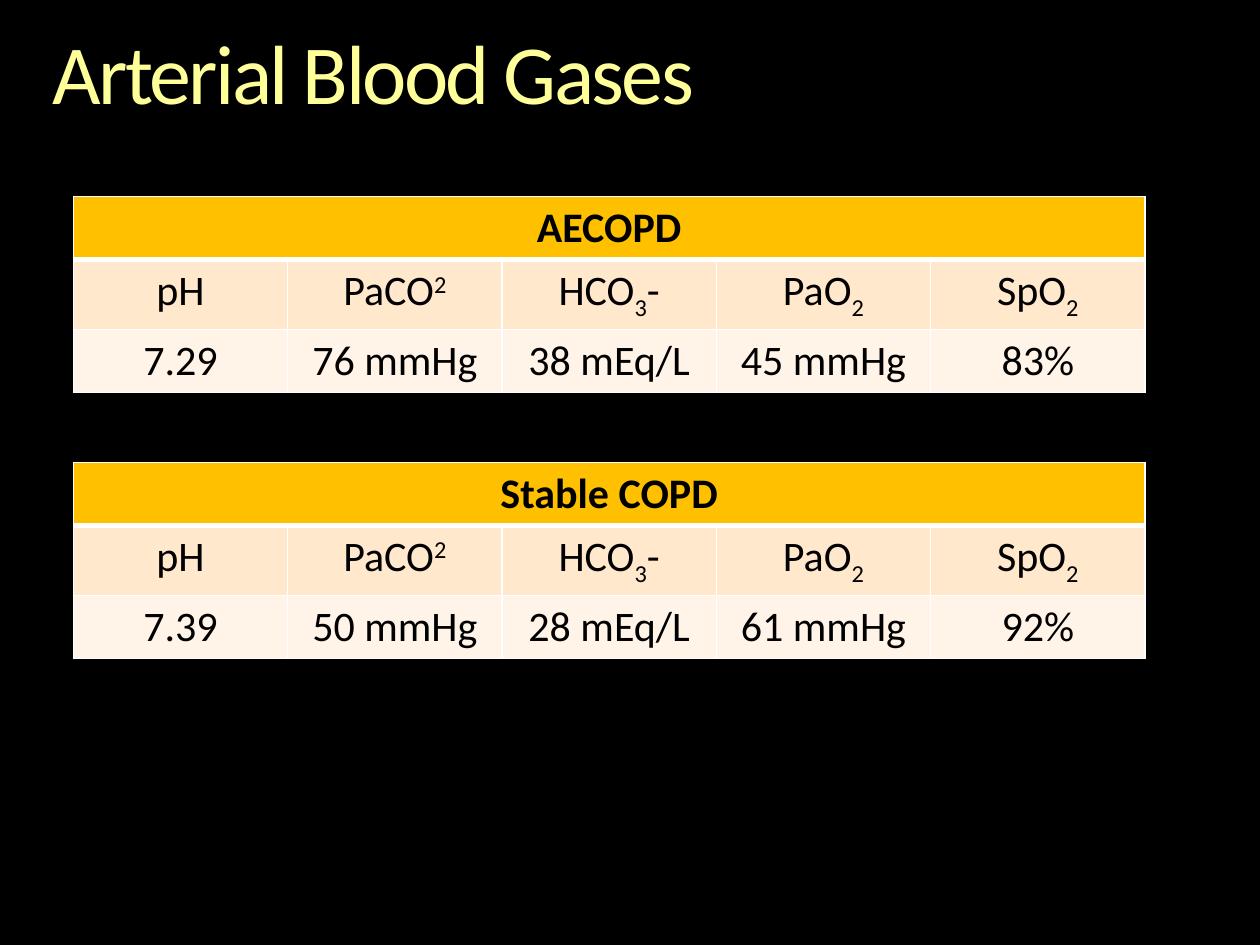
from pptx import Presentation
from pptx.dml.color import RGBColor
from pptx.enum.text import MSO_ANCHOR, MSO_AUTO_SIZE, PP_ALIGN
from pptx.oxml import parse_xml
from pptx.oxml.ns import nsdecls
from pptx.util import Cm, Pt

BLACK = RGBColor(0x00, 0x00, 0x00)
WHITE = RGBColor(0xFF, 0xFF, 0xFF)
YELLOW = RGBColor(0xFF, 0xFF, 0x99)
ROW_FILLS = [
    RGBColor(0xFF, 0xC0, 0x00),
    RGBColor(0xFF, 0xE8, 0xCC),
    RGBColor(0xFF, 0xF4, 0xE7),
]

# Each measure is a list of (text, baseline shift in percent)
MEASURES = [
    [("pH", 0)],
    [("PaCO", 0), ("2", 30)],
    [("HCO", 0), ("3", -25), ("-", 0)],
    [("PaO", 0), ("2", -25)],
    [("SpO", 0), ("2", -25)],
]
GASES = [
    ("AECOPD", 3.96, ["7.29", "76 mmHg", "38 mEq/L", "45 mmHg", "83%"]),
    ("Stable COPD", 9.32, ["7.39", "50 mmHg", "28 mEq/L", "61 mmHg", "92%"]),
]


def fill_cell(cell, spans, row):
    cell.fill.solid()
    cell.fill.fore_color.rgb = ROW_FILLS[row]
    para = cell.text_frame.paragraphs[0]
    para.alignment = PP_ALIGN.CENTER
    para.font.name = "Calibri"
    para.font.size = Pt(24)
    para.font.bold = row == 0
    para.font.color.rgb = BLACK
    for text, baseline in spans:
        span = para.add_run()
        span.text = text
        if baseline:
            span._r.get_or_add_rPr().set("baseline", str(baseline * 1000))


def add_borders(cell, row):
    # The rule under the heading row is thicker, seen from both rows
    widths = {"L": 1, "R": 1, "T": 3 if row == 1 else 1, "B": 3 if row == 0 else 1}
    properties = cell._tc.get_or_add_tcPr()
    for index, (side, width) in enumerate(widths.items()):
        properties.insert(index, parse_xml(
            f'<a:ln{side} {nsdecls("a")} w="{Pt(width)}"><a:solidFill>'
            f'<a:srgbClr val="{WHITE}"/></a:solidFill></a:ln{side}>'))


deck = Presentation()
deck.slide_width, deck.slide_height = Cm(25.4), Cm(19.05)
page = deck.slides.add_slide(deck.slide_layouts[5])
page.background.fill.solid()
page.background.fill.fore_color.rgb = BLACK

# Title
title = page.shapes.title
title.left, title.top, title.width, title.height = Cm(1.06), Cm(0.64), Cm(23.28), Cm(1.86)
frame = title.text_frame
frame.margin_left = frame.margin_top = frame.margin_right = frame.margin_bottom = 0
frame.vertical_anchor = MSO_ANCHOR.TOP
frame.word_wrap = True
frame.auto_size = MSO_AUTO_SIZE.SHAPE_TO_FIT_TEXT
para = frame.paragraphs[0]
para.alignment = PP_ALIGN.LEFT
para.line_spacing = 0.9
para.font.name = "Calibri"
para.font.size = Pt(48)
para.font.color.rgb = YELLOW
span = para.add_run()
span.text = "Arterial Blood Gases"
span._r.get_or_add_rPr().set("spc", "-150")

# One table per condition
for condition, top, values in GASES:
    holder = page.shapes.add_table(3, 5, Cm(1.48), Cm(top), Cm(21.6), Cm(3.81))
    table = holder.table
    for line in table.rows:
        line.height = Cm(1.04)
    holder.height = Cm(3.81)
    table.cell(0, 0).merge(table.cell(0, 4))
    fill_cell(table.cell(0, 0), [(condition, 0)], 0)
    for column in range(5):
        fill_cell(table.cell(1, column), MEASURES[column], 1)
        fill_cell(table.cell(2, column), [(values[column], 0)], 2)
        for row in range(3):
            add_borders(table.cell(row, column), row)

deck.save("out.pptx")
